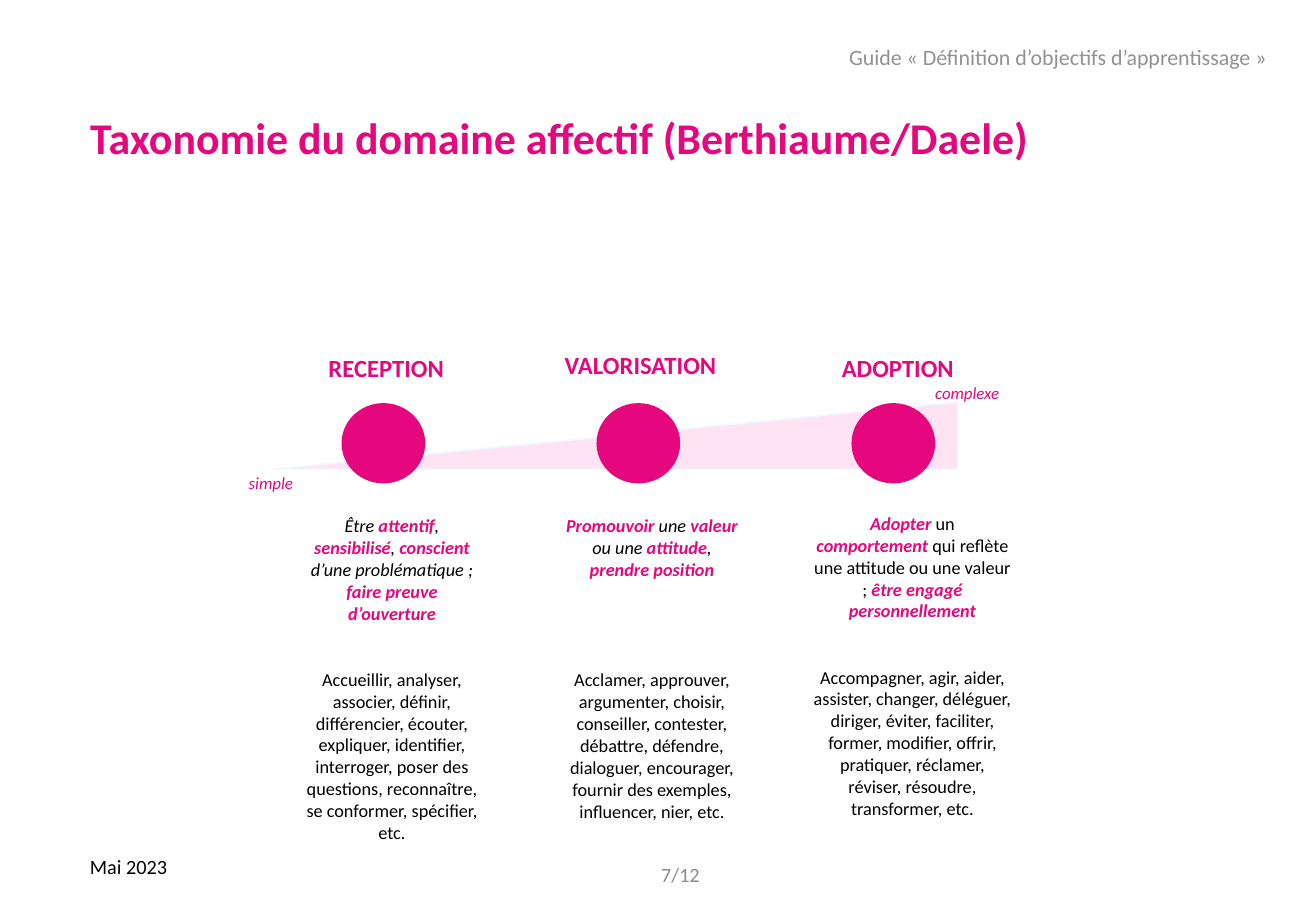
import pptx
import pptx.util
import pptx.dml.color
import pptx.enum.shapes
import pptx.enum.text
from dataclasses import dataclass

Cm = pptx.util.Cm
Pt = pptx.util.Pt
RGBColor = pptx.dml.color.RGBColor
Align = pptx.enum.text.PP_ALIGN
Anchor = pptx.enum.text.MSO_ANCHOR
Form = pptx.enum.shapes.MSO_SHAPE

PINK = RGBColor(0xE4, 0x07, 0x7E)
PALE = RGBColor(0xFF, 0xE3, 0xF3)
EDGE = RGBColor(0xF0, 0xF9, 0xFE)
BLACK = RGBColor(0, 0, 0)
SLATE = RGBColor(0x92, 0x92, 0x93)
GREY = RGBColor(0x8C, 0x8C, 0x8C)


@dataclass
class Box:
    left: float
    top: float
    width: float
    height: float

    def place(self) -> list:
        return [Cm(v) for v in (self.left, self.top, self.width, self.height)]


@dataclass
class Step:
    name: str
    head: Box
    body: Box
    goal: str
    slant: bool
    gap: float
    verbs: str


@dataclass
class Label:
    text: str
    box: Box
    style: dict


STEPS = [
    Step("RECEPTION", Box(5.46, 6.27, 5.23, 1.85), Box(6.1, 10.64, 4.19, 5.87),
         "Être *attentif*, *sensibilisé*, *conscient* d’une problématique ; "
         "*faire preuve d’ouverture*", True, 26.2,
         "Accueillir, analyser, associer, définir, différencier, écouter, "
         "expliquer, identifier, interroger, poser des questions, reconnaître, "
         "se conformer, spécifier, etc."),
    Step("VALORISATION", Box(10.95, 6.22, 4.88, 1.85), Box(11.56, 10.64, 4.14, 5.99),
         "*Promouvoir *une *valeur* ou une *attitude*, *prendre position*", True, 52.4,
         "Acclamer, approuver, argumenter, choisir, conseiller, contester, "
         "débattre, défendre, dialoguer, encourager, fournir des exemples, "
         "influencer, nier, etc."),
    Step("ADOPTION", Box(16.33, 6.27, 4.88, 1.85), Box(16.74, 10.59, 4.67, 6.32),
         "*Adopter *un *comportement* qui reflète une attitude ou une valeur ; "
         "*être engagé personnellement*", False, 26.2,
         "Accompagner, agir, aider, assister, changer, déléguer, diriger, éviter, "
         "faciliter, former, modifier, offrir, pratiquer, réclamer, réviser, "
         "résoudre, transformer, etc."),
]

LABELS = [
    Label("Guide « Définition d’objectifs d’apprentissage »", Box(17.5, 0.38, 9.75, 1.7),
          dict(size=13, color=SLATE, anchor=Anchor.MIDDLE, space=0.9)),
    Label("simple", Box(4.95, 9.75, 3.07, 0.69), dict(size=10, color=PINK, slant=True)),
    Label("complexe", Box(19.3, 7.87, 3.07, 0.69), dict(size=10, color=PINK, slant=True)),
    Label("Mai 2023", Box(1.63, 17.75, 3, 0.76), dict(size=12)),
    Label("7/12", Box(13.51, 17.78, 1.37, 1.02),
          dict(size=12, color=GREY, align=Align.RIGHT, anchor=Anchor.MIDDLE)),
]


def write(shape, text: str, *, size: float, color=BLACK, bold: bool = False,
          slant: bool = False, align=Align.LEFT, anchor=Anchor.TOP,
          space: float = 1.0, gap: float = 0, more: bool = False) -> None:
    frame = shape.text_frame
    frame.word_wrap = True
    frame.auto_size = pptx.enum.text.MSO_AUTO_SIZE.NONE
    frame.vertical_anchor = anchor
    para = frame.add_paragraph() if more else frame.paragraphs[0]
    para.alignment = align
    para.line_spacing = space
    if more:
        para.space_before = Pt(gap)
    for rank, part in enumerate(text.split("*")):
        if not part:
            continue
        key = rank % 2 == 1
        run = para.add_run()
        run.text = part
        font = run.font
        font.name = "Calibri"
        font.size = Pt(size)
        font.bold = bold or key
        font.italic = slant or key
        font.color.rgb = PINK if key else color


def draw(slide, kind, box: Box, fill: RGBColor):
    shape = slide.shapes.add_shape(kind, *box.place())
    shape.shadow.inherit = False
    shape.fill.solid()
    shape.fill.fore_color.rgb = fill
    shape.line.fill.background()
    return shape


def add_step(slide, step: Step) -> None:
    head = slide.shapes.add_textbox(*step.head.place())
    write(head, step.name, size=14.6, color=PINK, bold=True,
          align=Align.CENTER, anchor=Anchor.BOTTOM)
    body = slide.shapes.add_textbox(*step.body.place())
    write(body, step.goal, size=10.8, slant=step.slant, align=Align.CENTER)
    write(body, step.verbs, size=10.8, align=Align.CENTER, gap=step.gap, more=True)


def main() -> None:
    deck = pptx.Presentation()
    deck.slide_width = Cm(27.51)
    deck.slide_height = Cm(19.05)
    slide = deck.slides.add_slide(deck.slide_layouts[5])

    title = slide.shapes.title
    title.left, title.top, title.width, title.height = Box(1.63, 2.08, 25.2, 1.7).place()
    write(title, "Taxonomie du domaine affectif (Berthiaume/Daele)", size=26,
          color=PINK, bold=True, anchor=Anchor.MIDDLE, space=0.9)

    wedge = draw(slide, Form.ISOSCELES_TRIANGLE, Box(12.17, 1.96, 1.4, 14.3), PALE)
    wedge.adjustments[0] = 0
    wedge.rotation = 270
    wedge.line.color.rgb = EDGE
    wedge.line.width = Pt(1)

    for rank, step in enumerate(STEPS):
        add_step(slide, step)
        dot = Box(7.14 + 5.33 * rank, 8.43, 1.75, 1.68)
        draw(slide, Form.FLOWCHART_CONNECTOR, dot, PINK)

    for label in LABELS:
        write(slide.shapes.add_textbox(*label.box.place()), label.text, **label.style)

    deck.save("out.pptx")


if __name__ == "__main__":
    main()
